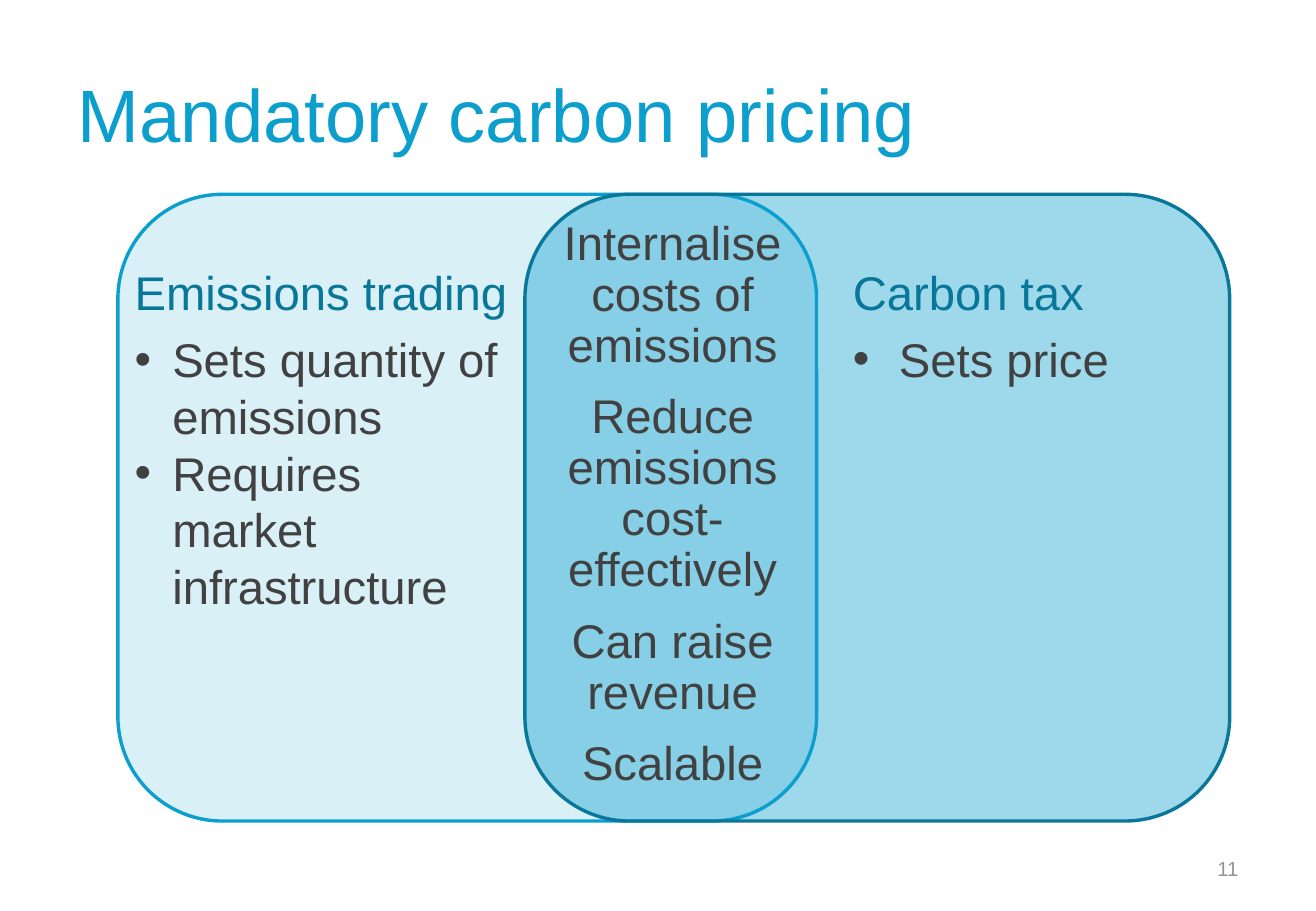
from lxml import etree
from pptx import Presentation
from pptx import util as u
from pptx.dml.color import RGBColor
from pptx.enum import shapes, text
from pptx.oxml import ns

PX = 9144  # 100 px to the inch
COLORS = {"blue": "0C9FCD", "teal": "09779A", "body": "414141", "grey": "939393"}
MIDDLE = text.MSO_ANCHOR.MIDDLE
TOP = text.MSO_ANCHOR.TOP


def px(*lengths):
    return [u.Emu(length * PX) for length in lengths]


def rgb(name):
    return RGBColor.from_string(COLORS[name])


def add_child(parent, tag, **attributes):
    return etree.SubElement(parent, ns.qn(tag), attributes)


def add_box(slide, place, anchor=TOP):
    frame = slide.shapes.add_textbox(*px(*place)).text_frame
    frame.word_wrap = True
    frame.vertical_anchor = anchor
    return frame


def add_text(frame, words, size=28, color="body", align=text.PP_ALIGN.LEFT,
             after=0, spacing=None, indent=0):
    """Add a paragraph; an indent in px makes it a bullet."""
    first = frame.paragraphs[0]
    paragraph = frame.add_paragraph() if first.runs else first
    paragraph.alignment = align
    paragraph.space_after = u.Pt(after)
    if spacing:
        paragraph.line_spacing = spacing
    if indent:
        properties = paragraph._p.get_or_add_pPr()
        properties.set("marL", str(indent * PX))
        properties.set("indent", str(-indent * PX))
        add_child(properties, "a:buFont", typeface="Arial")
        add_child(properties, "a:buChar", char="•")
    run = paragraph.add_run()
    run.text = words
    run.font.name = "Arial"
    run.font.size = u.Pt(size)
    run.font.color.rgb = rgb(color)


def add_field(slide, place, opacity, outline):
    """Draw one see-through rounded field of the diagram."""
    field = slide.shapes.add_shape(shapes.MSO_SHAPE.ROUNDED_RECTANGLE, *px(*place))
    field.shadow.inherit = False
    field.fill.solid()
    field.fill.fore_color.rgb = rgb("blue")
    tint = field._element.spPr.find(ns.qn("a:solidFill"))[0]
    add_child(tint, "a:alpha", val=str(opacity * 1000))
    field.line.color.rgb = rgb(outline)
    field.line.width = u.Pt(2)


def add_policy(slide, place, heading, points, indent):
    policy = add_box(slide, place)
    add_text(policy, heading, color="teal", after=6)
    for point in points:
        add_text(policy, point, indent=indent)


def main():
    deck = Presentation()
    deck.slide_width, deck.slide_height = px(1083, 750)
    slide = deck.slides.add_slide(deck.slide_layouts[6])

    # Title and page number
    title = add_box(slide, (54, 30, 975, 125), MIDDLE)
    add_text(title, "Mandatory carbon pricing", size=44, color="blue")
    page_number = add_box(slide, (776, 695, 253, 40), MIDDLE)
    add_text(page_number, "11", size=12, color="grey", align=text.PP_ALIGN.RIGHT)

    # Overlapping fields
    add_field(slide, (97, 160, 575, 516), 15, "blue")
    add_field(slide, (432, 160, 580, 516), 40, "teal")

    # The two policies
    add_policy(slide, (101, 212, 334, 332), "Emissions trading",
               ["Sets quantity of emissions", "Requires market infrastructure"], 31)
    add_policy(slide, (692, 212, 304, 113), "Carbon tax", ["Sets price"], 38)

    # What they share
    shared = add_box(slide, (435, 176, 237, 485))
    for benefit in ("Internalise costs of emissions", "Reduce emissions cost-effectively",
                    "Can raise revenue", "Scalable"):
        add_text(shared, benefit, align=text.PP_ALIGN.CENTER, after=12, spacing=0.9)

    deck.save("out.pptx")


if __name__ == "__main__":
    main()
